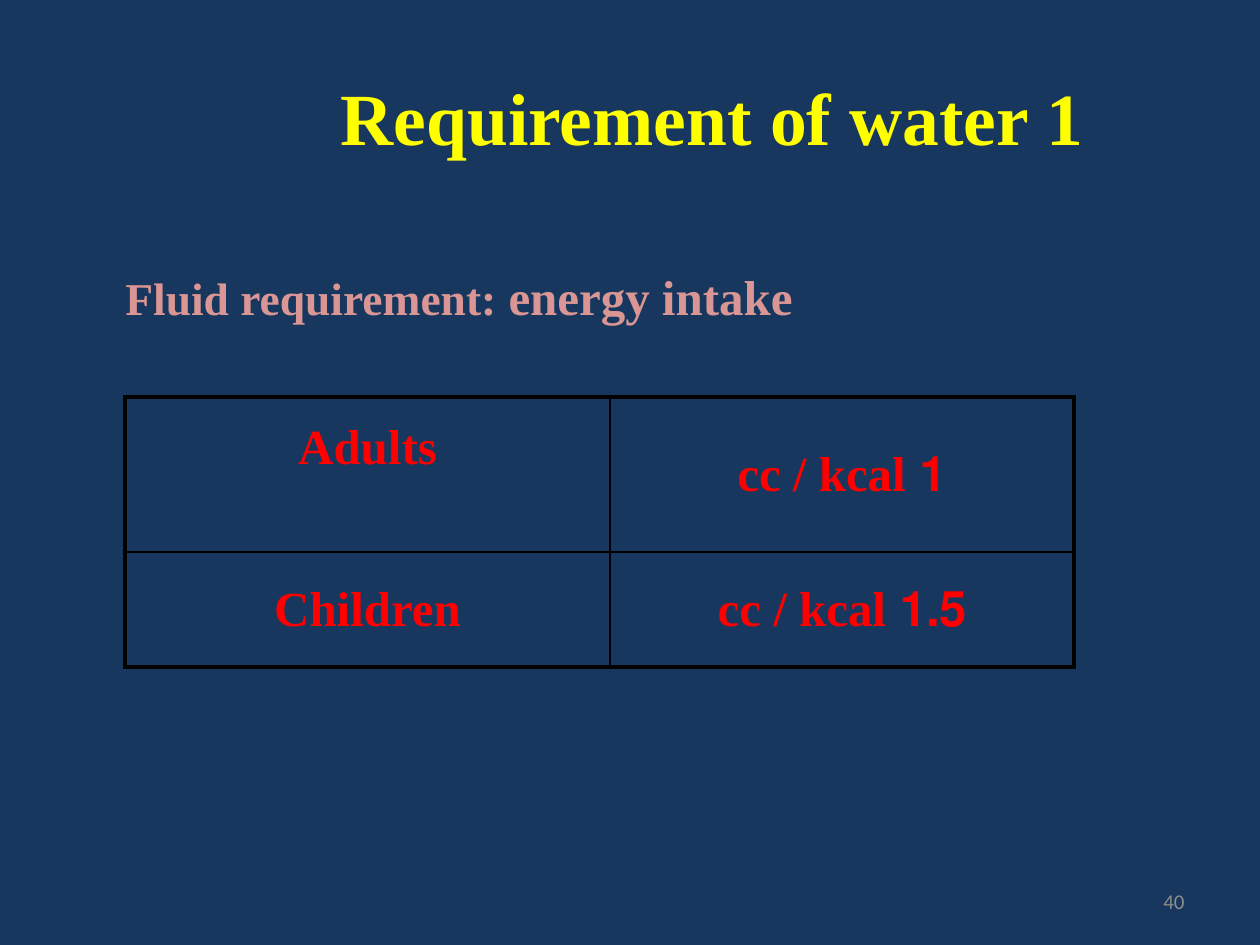
from lxml import etree
from pptx import Presentation
from pptx import util as u
from pptx.dml.color import RGBColor
from pptx.enum import text
from pptx.oxml.ns import qn

PX = 914400 / 126
SERIF = "Times New Roman"
COLORS = {
    "background": "17375E",
    "title": "FFFF00",
    "lead": "D99694",
    "cell": "FF0000",
    "border": "000000",
    "number": "8C8C8C",
}


def px(*lengths):
    return [u.Emu(round(length * PX)) for length in lengths]


def style(span, size, color, name=SERIF, bold=True):
    span.font.name = name
    span.font.size = u.Pt(size)
    span.font.bold = bold
    span.font.color.rgb = RGBColor.from_string(COLORS[color])


deck = Presentation()
deck.slide_width, deck.slide_height = px(1260, 945)
page = deck.slides.add_slide(deck.slide_layouts[5])
page.background.fill.solid()
page.background.fill.fore_color.rgb = RGBColor.from_string(COLORS["background"])

title = page.shapes.title
title.left, title.top, title.width, title.height = px(227, 38, 970, 157)
title.text_frame.text = "Requirement of water 1"
title.text_frame.vertical_anchor = text.MSO_ANCHOR.MIDDLE
para = title.text_frame.paragraphs[0]
para.alignment = text.PP_ALIGN.CENTER
style(para.runs[0], 42, "title")

lead = page.shapes.add_textbox(*px(113, 255, 1067, 81))
lead.text_frame.word_wrap = True
lead.text_frame.margin_top = px(12)[0]
para = lead.text_frame.paragraphs[0]
for words, size in (("Fluid requirement: ", 26), ("energy intake", 28)):
    span = para.add_run()
    span.text = words
    style(span, size, "lead")

rows = [("Adults", "1 cc / kcal"), ("Children", "1.5 cc / kcal")]
table = page.shapes.add_table(2, 2, *px(125, 397, 949, 270)).table
table.first_row = table.horz_banding = False
for column, width in zip(table.columns, px(485, 464)):
    column.width = width
for row, height in zip(table.rows, px(155, 115)):
    row.height = height

for i, row in enumerate(rows):
    for j, words in enumerate(row):
        cell = table.cell(i, j)
        cell.text_frame.text = words
        cell.vertical_anchor = text.MSO_ANCHOR.MIDDLE
        para = cell.text_frame.paragraphs[0]
        para.alignment = text.PP_ALIGN.CENTER
        para._p.get_or_add_pPr().set("rtl", "1")
        style(para.runs[0], 28, "cell")
        outer = {"L": j == 0, "R": j == 1, "T": i == 0, "B": i == 1}
        for side, is_outer in outer.items():
            width = u.Pt(2.25 if is_outer else 1)
            line = etree.SubElement(cell._tc.get_or_add_tcPr(), qn(f"a:ln{side}"), w=str(width))
            fill = etree.SubElement(line, qn("a:solidFill"))
            etree.SubElement(fill, qn("a:srgbClr"), val=COLORS["border"])
        cell.fill.background()
table.cell(0, 0).margin_bottom = px(60)[0]

number = page.shapes.add_textbox(*px(903, 876, 294, 50))
number.text_frame.word_wrap = True
number.text_frame.vertical_anchor = text.MSO_ANCHOR.MIDDLE
number.text_frame.text = "40"
para = number.text_frame.paragraphs[0]
para.alignment = text.PP_ALIGN.RIGHT
style(para.runs[0], 12, "number", "Calibri", False)

deck.save("out.pptx")
